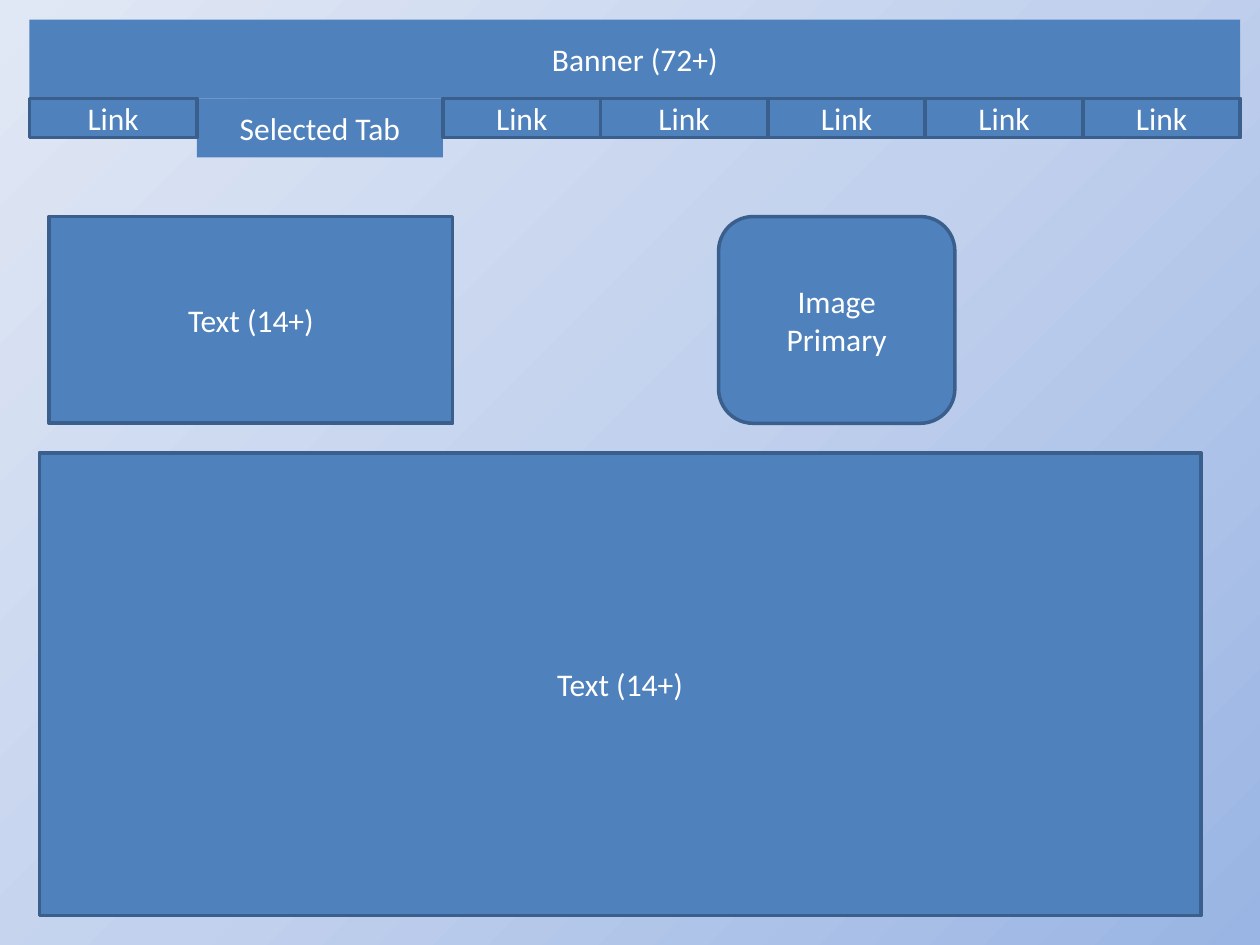
from lxml import etree
from pptx import Presentation
from pptx import util as u
from pptx.dml.color import RGBColor
from pptx.enum import shapes, text
from pptx.oxml.ns import qn

PX = 914400 / 128  # EMU per px, 1280 x 960 px slide
BLUE = RGBColor(0x4F, 0x81, 0xBD)
EDGE = RGBColor(0x3A, 0x5F, 0x8C)
WHITE = RGBColor(0xFF, 0xFF, 0xFF)
BACKDROP = [(0, RGBColor(0x9A, 0xB5, 0xE4)),
            (50, RGBColor(0xC2, 0xD1, 0xED)),
            (100, RGBColor(0xE1, 0xE8, 0xF5))]


def px(n):
    return u.Emu(round(n * PX))


def add_box(s, x, y, w, h, label, outlined=True, kind=shapes.MSO_SHAPE.RECTANGLE):
    sp = s.shapes.add_shape(kind, px(x), px(y), px(w), px(h))
    sp.shadow.inherit = False
    sp.fill.solid()
    sp.fill.fore_color.rgb = BLUE
    if outlined:
        sp.line.color.rgb = EDGE
        sp.line.width = u.Pt(2)
    else:
        sp.line.fill.background()
    tf = sp.text_frame
    tf.word_wrap = True
    tf.vertical_anchor = text.MSO_ANCHOR.MIDDLE
    tf.text = label
    for p in tf.paragraphs:
        p.alignment = text.PP_ALIGN.CENTER
        p.font.name = "Calibri"
        p.font.size = u.Pt(18)
        p.font.color.rgb = WHITE


prs = Presentation()
prs.slide_width, prs.slide_height = px(1280), px(960)
s = prs.slides.add_slide(prs.slide_layouts[6])

# Background: radial gradient centred on the bottom right corner
s.background.fill.gradient()
grad = s.element.find(".//" + qn("a:gradFill"))
for child in list(grad):
    grad.remove(child)
stops = etree.SubElement(grad, qn("a:gsLst"))
for pos, color in BACKDROP:
    gs = etree.SubElement(stops, qn("a:gs"), pos=str(pos * 1000))
    etree.SubElement(gs, qn("a:srgbClr"), val=str(color))
circle = etree.SubElement(grad, qn("a:path"), path="circle")
etree.SubElement(circle, qn("a:fillToRect"), l="100000", t="100000")

# Banner and selected tab
add_box(s, 30, 20, 1230, 80, "Banner (72+)", outlined=False)
add_box(s, 200, 100, 250, 60, "Selected Tab", outlined=False)

# Navigation links, the selected tab filling the gap after the first
for x, w in [(30, 170), (450, 160), (610, 170), (780, 160), (940, 160), (1100, 160)]:
    add_box(s, x, 100, w, 40, "Link")

# Content areas
add_box(s, 40, 460, 1180, 470, "Text (14+)")
add_box(s, 50, 220, 410, 210, "Text (14+)")
add_box(s, 730, 220, 240, 210, "Image\nPrimary",
        kind=shapes.MSO_SHAPE.ROUNDED_RECTANGLE)

prs.save("out.pptx")
